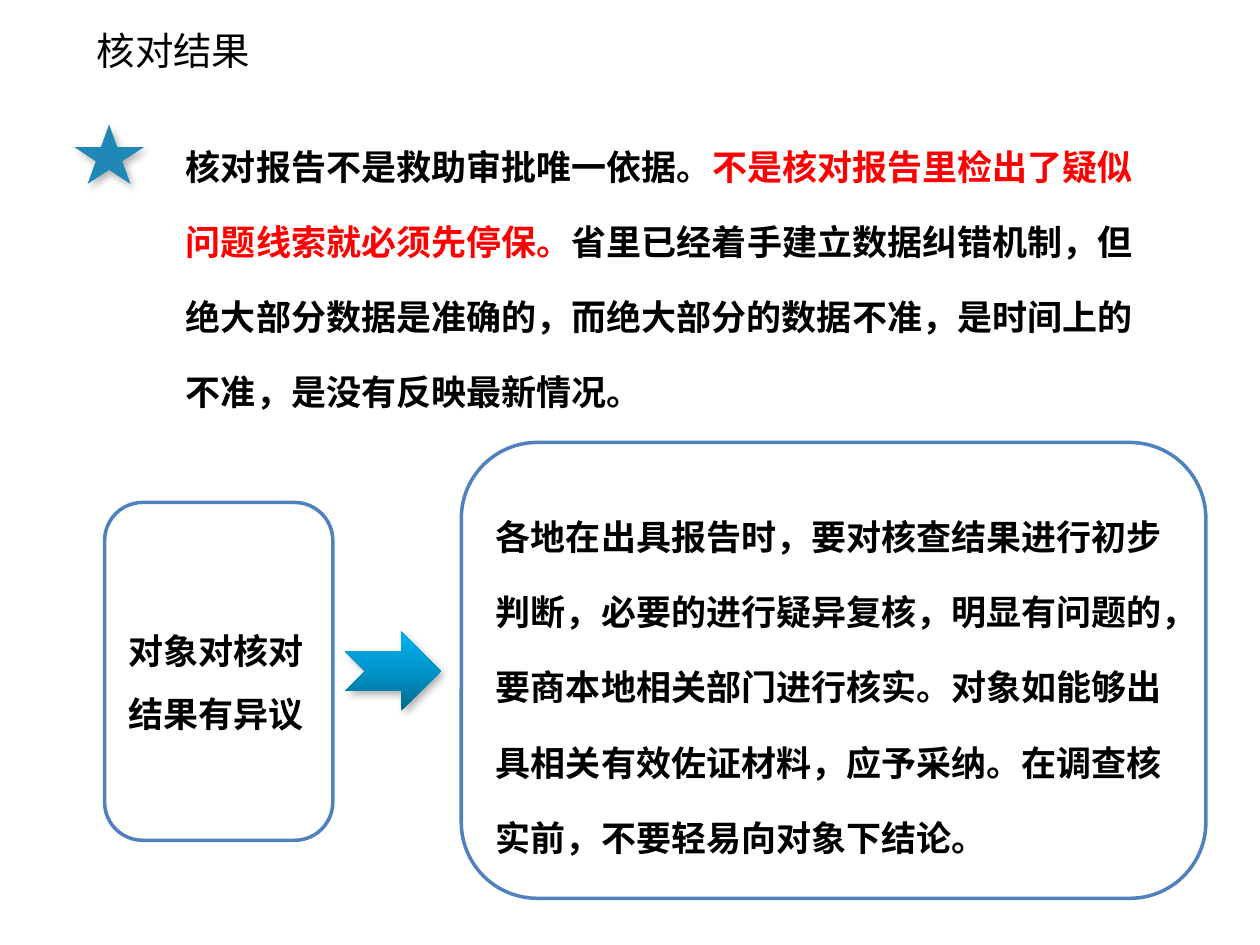
import copy

import lxml.etree
import pptx
import pptx.dml.color
import pptx.enum.shapes
import pptx.enum.text
import pptx.oxml.ns
import pptx.util

Cm = pptx.util.Cm
Pt = pptx.util.Pt
Kind = pptx.enum.shapes.MSO_SHAPE
Anchor = pptx.enum.text.MSO_ANCHOR
Align = pptx.enum.text.PP_ALIGN
qn = pptx.oxml.ns.qn

HUES = {
    "ink": "000000",
    "alert": "FF0000",
    "edge": "4F81BD",
    "star": "1F88B7",
    "deep": "00688E",
    "mid": "0094CA",
    "light": "00B0F0",
}
SANS = "Noto Sans CJK SC"


def rgb(name):
    return pptx.dml.color.RGBColor.from_string(HUES[name])


class Deck:
    """Holds the text style and the current slide."""

    def __init__(self, slide, size=20, lead=Pt(43)):
        self.slide = slide
        self.size = size
        self.lead = lead

    def label(self, shape, parts, font=SANS, size=None, lead=None,
              bold=True, anchor=Anchor.MIDDLE):
        """Fill a shape with one paragraph of (text, colour) parts."""
        frame = shape.text_frame
        frame.word_wrap = True
        frame.vertical_anchor = anchor
        para = frame.paragraphs[0]
        para.alignment = Align.LEFT
        para.line_spacing = lead or self.lead
        for text, hue in parts:
            run = para.add_run()
            run.text = text
            run.font.size = Pt(size or self.size)
            run.font.bold = bold
            run.font.color.rgb = rgb(hue)
            run.font.name = font
            east = lxml.etree.SubElement(run.font._element, qn("a:ea"))
            east.set("typeface", SANS)

    def text(self, box, parts, **style):
        shape = self.slide.shapes.add_textbox(*map(Cm, box))
        self.label(shape, parts, **style)

    def shape(self, kind, box):
        shape = self.slide.shapes.add_shape(kind, *map(Cm, box))
        shape.shadow.inherit = False
        return shape

    def panel(self, box, text, **style):
        shape = self.shape(Kind.ROUNDED_RECTANGLE, box)
        shape.fill.background()
        shape.line.color.rgb = rgb("edge")
        shape.line.width = Pt(2)
        self.label(shape, [(text, "ink")], **style)

    def icon(self, kind, box, hues):
        """Draw a shadowed shape; several hues give a gradient, bottom to top."""
        shape = self.shape(kind, box)
        shape.line.fill.background()
        if len(hues) == 1:
            shape.fill.solid()
            shape.fill.fore_color.rgb = rgb(hues[0])
        else:
            self.blend(shape.fill, hues)
        self.shade(shape)

    def blend(self, fill, hues):
        fill.gradient()
        fill.gradient_angle = 90
        first = fill.gradient_stops[0]._gs
        for _ in hues[2:]:
            first.addnext(copy.deepcopy(first))
        for i, (stop, hue) in enumerate(zip(fill.gradient_stops, hues)):
            stop.position = i / (len(hues) - 1)
            stop.color.rgb = rgb(hue)

    def shade(self, shape):
        effects = shape._element.spPr.find(qn("a:effectLst"))
        outer = lxml.etree.SubElement(
            effects, qn("a:outerShdw"), blurRad=str(Pt(4.5)),
            dist=str(Pt(2.6)), dir=str(53 * 60000), rotWithShape="0")
        tone = lxml.etree.SubElement(outer, qn("a:srgbClr"), val=HUES["ink"])
        lxml.etree.SubElement(tone, qn("a:alpha"), val="30000")


def main():
    prs = pptx.Presentation()
    prs.slide_width, prs.slide_height = Cm(25.4), Cm(19.05)
    deck = Deck(prs.slides.add_slide(prs.slide_layouts[6]))

    deck.text((1.7, 0.2, 19.48, 1.63), [("核对结果", "ink")],
              font="Calibri", size=22, lead=1.0, bold=False)
    deck.text((3.5, 2.13, 20.2, 3.66), [
        ("核对报告不是救助审批唯一依据。", "ink"),
        ("不是核对报告里检出了疑似问题线索就必须先停保。", "alert"),
        ("省里已经着手建立数据纠错机制，但绝大部分数据是准确的，"
         "而绝大部分的数据不准，是时间上的不准，是没有反映最新情况。", "ink"),
    ], font="Times New Roman", anchor=Anchor.TOP)
    deck.icon(Kind.STAR_5_POINT, (1.5, 2.51, 1.4, 1.2), ["star"])

    deck.icon(Kind.NOTCHED_RIGHT_ARROW, (6.96, 12.73, 1.93, 1.6),
              ["deep", "mid", "light"])
    deck.panel((2.11, 10.13, 4.6, 6.81), "对象对核对结果有异议", lead=1.5)
    deck.panel((9.3, 8.92, 15.01, 9.19),
               "各地在出具报告时，要对核查结果进行初步判断，必要的进行疑异复核，"
               "明显有问题的，要商本地相关部门进行核实。对象如能够出具相关有效佐证材料，"
               "应予采纳。在调查核实前，不要轻易向对象下结论。")

    prs.save("out.pptx")


if __name__ == "__main__":
    main()
